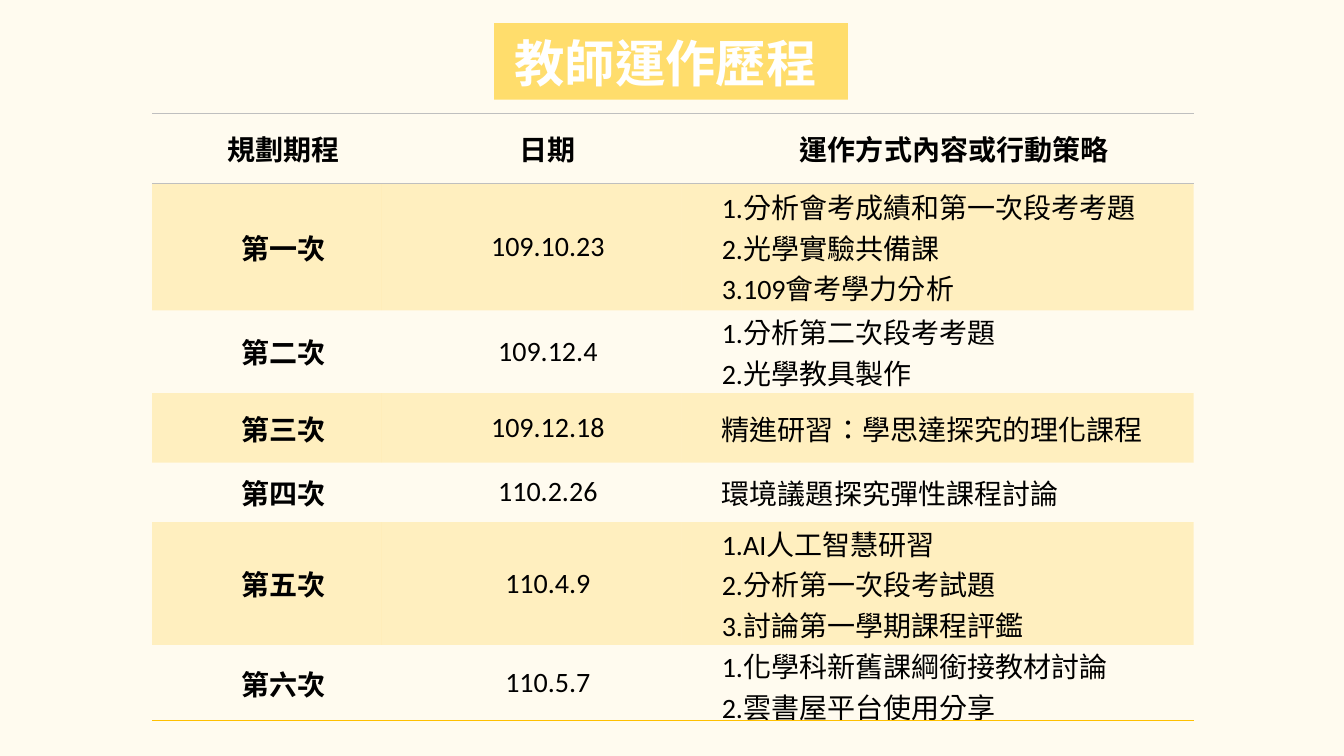
import pptx
import pptx.util
import pptx.dml.color
import pptx.enum.shapes
import pptx.enum.text
import pptx.oxml.ns
import lxml.etree

Inches = pptx.util.Inches
Pt = pptx.util.Pt
RGBColor = pptx.dml.color.RGBColor
Align = pptx.enum.text.PP_ALIGN
Anchor = pptx.enum.text.MSO_ANCHOR
qn = pptx.oxml.ns.qn

CREAM = RGBColor(0xFF, 0xFB, 0xEF)
YELLOW = RGBColor(0xFF, 0xDD, 0x6C)
GOLD = RGBColor(0xFF, 0xC0, 0x00)
GREY = RGBColor(0xBF, 0xBF, 0xBF)
WHITE = RGBColor(0xFF, 0xFF, 0xFF)
BLACK = RGBColor(0x00, 0x00, 0x00)

LATIN = "Calibri"
HAN = "Noto Sans CJK SC"
PLAIN = "{2D5ABB26-0587-4C30-8999-92F81FD0307C}"

COLS = [2.27, 2.98, 5.08]
ROWS = [0.69, 1.26, 0.82, 0.69, 0.59, 1.22, 0.75]
HEAD = ("規劃期程", "日期", "運作方式內容或行動策略")
PLAN = [
    ("第一次", "109.10.23",
     "1.分析會考成績和第一次段考考題\n2.光學實驗共備課\n3.109會考學力分析"),
    ("第二次", "109.12.4", "1.分析第二次段考考題\n2.光學教具製作"),
    ("第三次", "109.12.18", "精進研習：學思達探究的理化課程"),
    ("第四次", "110.2.26", "環境議題探究彈性課程討論"),
    ("第五次", "110.4.9",
     "1.AI人工智慧研習\n2.分析第一次段考試題\n3.討論第一學期課程評鑑"),
    ("第六次", "110.5.7", "1.化學科新舊課綱銜接教材討論\n2.雲書屋平台使用分享"),
]


def style(para, face, size, color, bold):
    for run in para.runs:
        font = run.font
        font.name, font.size, font.bold = face, Pt(size), bold
        font.color.rgb = color
        props = run._r.get_or_add_rPr()
        props.set("lang", "zh-TW")
        lxml.etree.SubElement(props, qn("a:ea")).set("typeface", HAN)


def place(shape, left, top, width, height):
    shape.left, shape.top = Inches(left), Inches(top)
    shape.width, shape.height = Inches(width), Inches(height)


def add_title(slide, text):
    box = slide.shapes.add_shape(
        pptx.enum.shapes.MSO_SHAPE.RECTANGLE,
        Inches(4.9), Inches(0.23), Inches(3.51), Inches(0.76))
    box.shadow.inherit = False
    box.fill.solid()
    box.fill.fore_color.rgb = YELLOW
    box.line.fill.background()
    title = slide.shapes.title
    title._element.addprevious(box._element)
    place(title, 5, 0.26, 3.23, 0.71)
    frame = title.text_frame
    frame.text = text
    frame.word_wrap = False
    frame.auto_size = pptx.enum.text.MSO_AUTO_SIZE.SHAPE_TO_FIT_TEXT
    frame.vertical_anchor = Anchor.MIDDLE
    para = frame.paragraphs[0]
    para.alignment = Align.LEFT
    style(para, HAN, 36, WHITE, True)


def add_edge(cell, side, color):
    line = lxml.etree.SubElement(cell._tc.get_or_add_tcPr(), qn("a:ln" + side))
    line.set("w", str(Pt(1)))
    fill = lxml.etree.SubElement(line, qn("a:solidFill"))
    lxml.etree.SubElement(fill, qn("a:srgbClr")).set("val", str(color))


def tint(cell, share):
    cell.fill.solid()
    cell.fill.fore_color.rgb = GOLD
    tone = cell._tc.tcPr.find(qn("a:solidFill")).find(qn("a:srgbClr"))
    lxml.etree.SubElement(tone, qn("a:alpha")).set("val", str(share * 1000))


def fill_cell(cell, text, align, bold):
    cell.text_frame.text = text
    cell.vertical_anchor = Anchor.MIDDLE
    cell.margin_left = cell.margin_right = Inches(0.07)
    cell.margin_top = cell.margin_bottom = 0
    for para in cell.text_frame.paragraphs:
        para.alignment = align
        props = para._p.get_or_add_pPr()
        props.set("marL", str(Inches(0.33)))
        props.set("indent", "0")
        style(para, LATIN, 20, BLACK, bold)


def add_plan(slide):
    frame = slide.shapes.add_table(
        len(ROWS), len(COLS), Inches(1.51), Inches(1.13),
        Inches(sum(COLS)), Inches(sum(ROWS)))
    table = frame.table
    table.first_row = table.horz_banding = False
    table._tbl.tblPr.find(qn("a:tableStyleId")).text = PLAIN
    for col, width in zip(table.columns, COLS):
        col.width = Inches(width)
    for row, height in zip(table.rows, ROWS):
        row.height = Inches(height)
    last = len(PLAN)
    for r, texts in enumerate([HEAD] + PLAN):
        for c, text in enumerate(texts):
            cell = table.cell(r, c)
            left = r > 0 and c == 2
            fill_cell(cell, text, Align.LEFT if left else Align.CENTER,
                      r == 0 or c == 0)
            if r == 0:
                add_edge(cell, "T", GREY)
                add_edge(cell, "B", GREY)
            if r == last:
                add_edge(cell, "B", GOLD)
            if r % 2:
                tint(cell, 20)
            else:
                cell.fill.background()


def main():
    deck = pptx.Presentation()
    deck.slide_width, deck.slide_height = Inches(13.33), Inches(7.5)
    slide = deck.slides.add_slide(deck.slide_layouts[5])
    slide.background.fill.solid()
    slide.background.fill.fore_color.rgb = CREAM
    add_title(slide, "教師運作歷程")
    add_plan(slide)
    deck.save("out.pptx")


if __name__ == "__main__":
    main()
